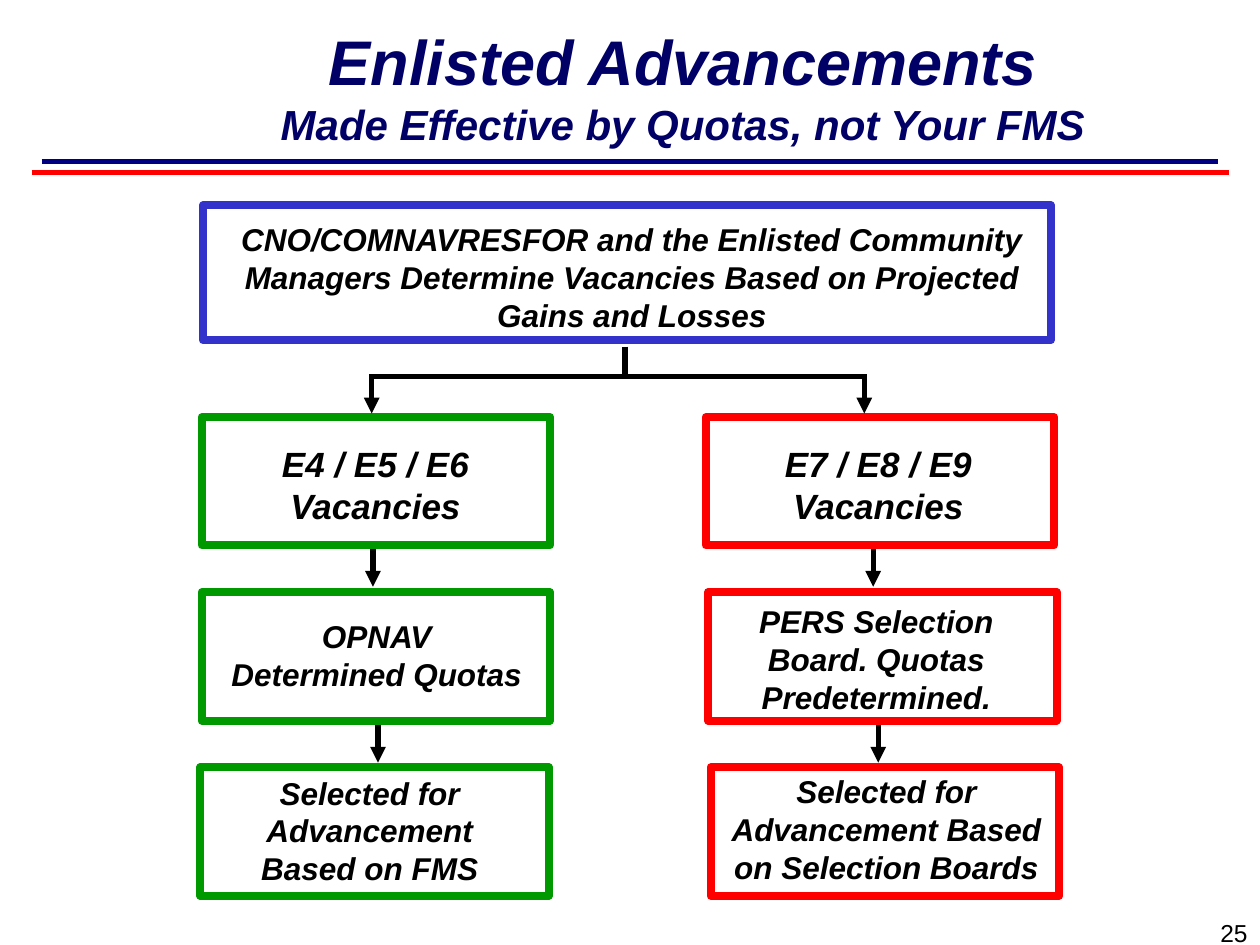
"""Build the enlisted advancements flow chart slide."""
from dataclasses import dataclass

from lxml import etree
from pptx import Presentation
from pptx.dml.color import RGBColor
from pptx.enum.shapes import MSO_CONNECTOR, MSO_SHAPE
from pptx.enum.text import MSO_ANCHOR, MSO_AUTO_SIZE, PP_ALIGN
from pptx.oxml.ns import qn
from pptx.util import Pt

RECTANGLE = MSO_SHAPE.RECTANGLE
STRAIGHT = MSO_CONNECTOR.STRAIGHT
TOP = MSO_ANCHOR.TOP
FIXED_SIZE = MSO_AUTO_SIZE.NONE
CENTER = PP_ALIGN.CENTER
RIGHT = PP_ALIGN.RIGHT

FONT = "Arial"
BLACK, WHITE = "000000", "FFFFFF"
NAVY, TITLE_NAVY, BLUE = "000080", "000066", "3333CC"
GREEN, RED = "009900", "FF0000"

STEP_WIDTH, STEP_HEIGHT = 199.2, 73.4
ROW_TOPS = [238.3 + 100.1 * row for row in range(3)]
ARROW_TOPS = [314, 414.5]
ARROW_LENGTH = 21.3


@dataclass
class Area:
    left: float
    top: float
    width: float
    height: float

    def lengths(self) -> list:
        return [Pt(value) for value in (self.left, self.top, self.width, self.height)]


@dataclass
class Step:
    frame: Area
    color: str
    text_area: Area
    lines: list[str]
    size: float = 18


@dataclass
class Line:
    start: tuple[float, float]
    end: tuple[float, float]
    color: str = BLACK
    width: float = 3
    arrow: bool = False


def rgb(value: str) -> RGBColor:
    return RGBColor.from_string(value)


def step_frame(left: float, row: int) -> Area:
    return Area(left, ROW_TOPS[row], STEP_WIDTH, STEP_HEIGHT)


def down_arrow(x: float, top: float) -> Line:
    return Line((x, top), (x, top + ARROW_LENGTH), arrow=True)


def add_span(para, text: str, size: float, color: str = BLACK, strong: bool = True) -> None:
    span = para.add_run()
    span.text = text
    span.font.name = FONT
    span.font.size = Pt(size)
    span.font.bold = strong
    span.font.italic = strong
    span.font.color.rgb = rgb(color)


def prepare_frame(frame) -> None:
    frame.word_wrap = True
    frame.auto_size = FIXED_SIZE
    frame.vertical_anchor = TOP


def add_line(page, line: Line) -> None:
    points = [Pt(value) for value in (*line.start, *line.end)]
    connector = page.shapes.add_connector(STRAIGHT, *points)
    connector.line.color.rgb = rgb(line.color)
    connector.line.width = Pt(line.width)
    if line.arrow:
        outline = connector.line._get_or_add_ln()
        etree.SubElement(outline, qn("a:tailEnd"), type="triangle")
    etree.SubElement(connector._element.spPr, qn("a:effectLst"))


def add_step(page, step: Step) -> None:
    border = page.shapes.add_shape(RECTANGLE, *step.frame.lengths())
    border.shadow.inherit = False
    border.fill.solid()
    border.fill.fore_color.rgb = rgb(WHITE)
    border.line.color.rgb = rgb(step.color)
    border.line.width = Pt(4.5)

    box = page.shapes.add_textbox(*step.text_area.lengths())
    prepare_frame(box.text_frame)
    for index, text in enumerate(step.lines):
        para = box.text_frame.add_paragraph() if index else box.text_frame.paragraphs[0]
        para.alignment = CENTER
        add_span(para, text, step.size)


def add_title(page) -> None:
    title = page.shapes.title
    title.left, title.top, title.width, title.height = Area(93.6, 9.4, 593.3, 90).lengths()
    prepare_frame(title.text_frame)
    para = title.text_frame.paragraphs[0]
    para.alignment = CENTER
    add_span(para, "Enlisted Advancements", 36, TITLE_NAVY)
    para.add_line_break()
    add_span(para, "Made Effective by Quotas, not Your FMS", 24, TITLE_NAVY)


def add_page_number(page) -> None:
    box = page.shapes.add_textbox(*Area(570.2, 504, 149.8, 36).lengths())
    prepare_frame(box.text_frame)
    box.text_frame.margin_top = Pt(20.4)
    box.text_frame.margin_bottom = Pt(0)
    para = box.text_frame.paragraphs[0]
    para.alignment = RIGHT
    add_span(para, "25", 14, strong=False)


STEPS = [
    Step(Area(115.9, 117.4, 484.6, 77), BLUE, Area(121.7, 122.4, 478.8, 72.7),
         ["CNO/COMNAVRESFOR and the Enlisted Community Managers Determine "
          "Vacancies Based on Projected Gains and Losses"]),
    Step(step_frame(115.2, 0), GREEN, Area(139.7, 249.1, 149.8, 55.4),
         ["E4 / E5 / E6", "Vacancies"], 20),
    Step(step_frame(403.2, 0), RED, Area(427, 249.1, 149.8, 55.4),
         ["E7 / E8 / E9", "Vacancies"], 20),
    Step(step_frame(115.2, 1), GREEN, Area(119.5, 349.2, 191.5, 51.1),
         ["OPNAV", "Determined Quotas"]),
    Step(step_frame(404.6, 1), RED, Area(411.1, 340.6, 179.3, 72.7),
         ["PERS Selection Board. Quotas Predetermined."]),
    Step(step_frame(114.5, 2), GREEN, Area(122.4, 438.5, 177.8, 72.7),
         ["Selected for Advancement Based on FMS"]),
    Step(step_frame(406.1, 2), RED, Area(402.5, 437.8, 208.1, 74.9),
         ["Selected for Advancement Based on Selection Boards"]),
]

HEADER_RULES = [
    Line((23.8, 92.2), (696.2, 92.2), NAVY, 2.5),
    Line((18, 98.6), (702, 98.6), RED, 2.5),
]

FLOW_LINES = [
    Line((211, 215.3), (495.4, 215.3)),
    Line((357.1, 198), (357.1, 216)),
    *[down_arrow(x, 215) for x in (212.4, 493.9)],
    *[down_arrow(x + 2.9 * row, top)
      for row, top in enumerate(ARROW_TOPS) for x in (213.1, 499)],
]


def main() -> None:
    deck = Presentation()
    deck.slide_width, deck.slide_height = Pt(720), Pt(540)
    page = deck.slides.add_slide(deck.slide_layouts.get_by_name("Title Only"))
    page.background.fill.solid()
    page.background.fill.fore_color.rgb = rgb(WHITE)
    for line in HEADER_RULES:
        add_line(page, line)
    for step in STEPS:
        add_step(page, step)
    for line in FLOW_LINES:
        add_line(page, line)
    add_page_number(page)
    add_title(page)
    deck.save("out.pptx")


if __name__ == "__main__":
    main()
